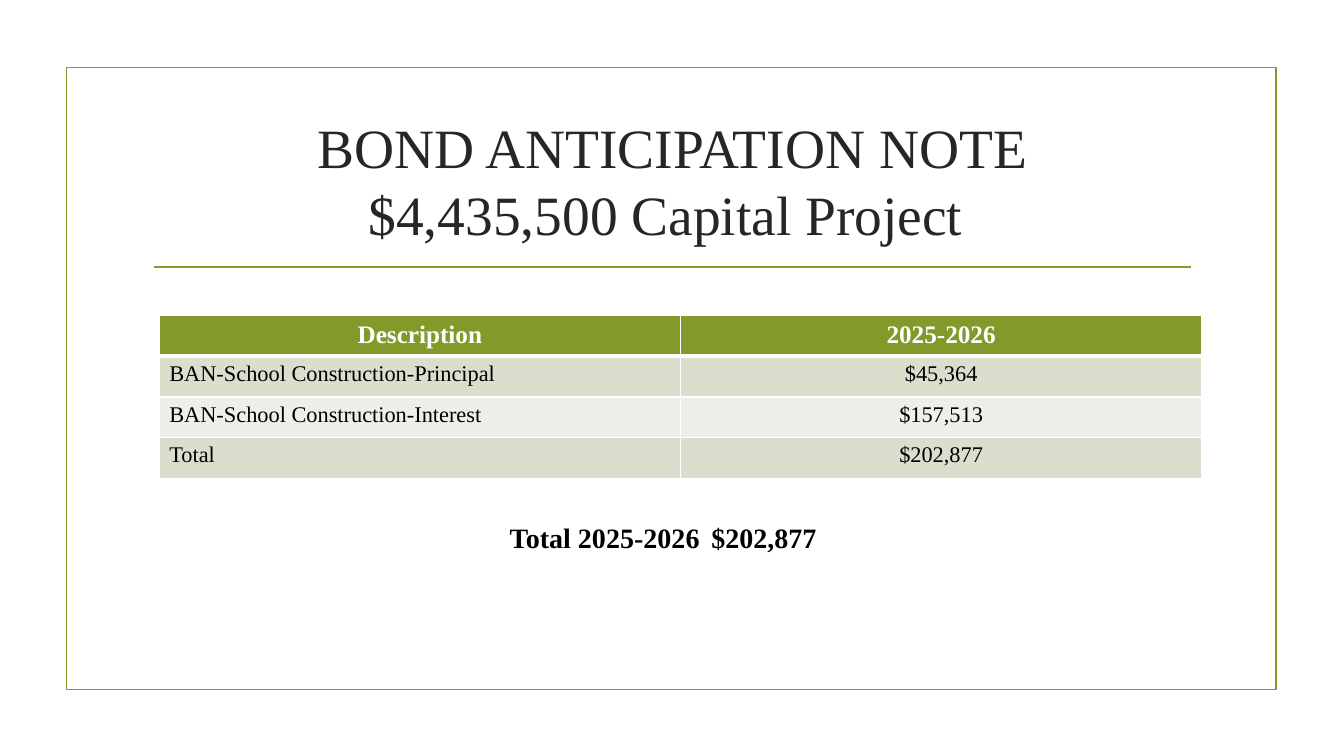
from dataclasses import dataclass
from typing import NamedTuple

from lxml.etree import SubElement
from pptx import Presentation
from pptx.dml.color import RGBColor
from pptx.enum.shapes import MSO_CONNECTOR, MSO_SHAPE
from pptx.enum.text import MSO_ANCHOR, MSO_AUTO_SIZE, PP_ALIGN
from pptx.oxml.ns import qn
from pptx.util import Emu, Pt

EMU_PER_PX = 9144  # 100 px to the inch


@dataclass(frozen=True)
class Theme:
    font: str = "Times New Roman"
    green: str = "83992A"
    title_ink: str = "262626"
    ink: str = "000000"
    white: str = "FFFFFF"
    bands: tuple[str, str] = ("D9DECD", "EDEFE8")
    title_size: float = 39.6
    header_size: float = 18
    cell_size: float = 16
    total_size: float = 20
    rule_width: float = 1.25
    grid_width: float = 1
    header_rule_width: float = 3


class Box(NamedTuple):
    x: int
    y: int
    w: int
    h: int

    def emu(self) -> tuple[Emu, ...]:
        return tuple(px(v) for v in self)


class BudgetRow(NamedTuple):
    description: str
    amount: str


THEME = Theme()
FRAME = Box(66, 67, 1200, 617)
TITLE = Box(142, 107, 1050, 143)
RULE = Box(153, 265, 1028, 0)
TABLE = Box(158, 313, 1034, 162)
TOTAL = Box(170, 511, 1021, 44)
ROWS = [
    BudgetRow("Description", "2025-2026"),
    BudgetRow("BAN-School Construction-Principal", "$45,364"),
    BudgetRow("BAN-School Construction-Interest", "$157,513"),
    BudgetRow("Total", "$202,877"),
]


def px(value: int) -> Emu:
    return Emu(value * EMU_PER_PX)


def rgb(color: str) -> RGBColor:
    return RGBColor.from_string(color)


def write(tf, text: str, *, size: float, color: str = THEME.ink,
          bold: bool = False, align=PP_ALIGN.CENTER) -> None:
    p = tf.paragraphs[0]
    p.text = text
    p.alignment = align
    for r in p.runs:
        r.font.name = THEME.font
        r.font.size = Pt(size)
        r.font.bold = bold
        r.font.color.rgb = rgb(color)


def style_line(line) -> None:
    line.color.rgb = rgb(THEME.green)
    line.width = Pt(THEME.rule_width)


def add_frame(s) -> None:
    sp = s.shapes.add_shape(MSO_SHAPE.RECTANGLE, *FRAME.emu())
    sp.shadow.inherit = False
    sp.fill.background()
    style_line(sp.line)


def add_rule(s) -> None:
    x, y, w, h = RULE.emu()
    rule = s.shapes.add_connector(MSO_CONNECTOR.STRAIGHT, x, y, x + w, y + h)
    style_line(rule.line)
    SubElement(rule._element.spPr, qn("a:effectLst"))


def add_title(s) -> None:
    sp = s.shapes.title
    sp.left, sp.top, sp.width, sp.height = TITLE.emu()
    tf = sp.text_frame
    tf.auto_size = MSO_AUTO_SIZE.NONE
    tf.vertical_anchor = MSO_ANCHOR.MIDDLE
    write(tf, "BOND ANTICIPATION NOTE\v$4,435,500 Capital Project ",
          size=THEME.title_size, color=THEME.title_ink)


def set_borders(cell, top: float, bottom: float) -> None:
    tc_pr = cell._tc.get_or_add_tcPr()
    widths = {"lnL": THEME.grid_width, "lnR": THEME.grid_width,
              "lnT": top, "lnB": bottom}
    for side, width in widths.items():
        ln = SubElement(tc_pr, qn(f"a:{side}"), w=str(Pt(width)))
        fill = SubElement(ln, qn("a:solidFill"))
        SubElement(fill, qn("a:srgbClr"), val=THEME.white)


def add_budget_table(s) -> None:
    columns = len(BudgetRow._fields)
    table = s.shapes.add_table(len(ROWS), columns, *TABLE.emu()).table
    table.horz_banding = False
    for i, row in enumerate(ROWS):
        header = i == 0
        top = THEME.header_rule_width if i == 1 else THEME.grid_width
        bottom = THEME.header_rule_width if header else THEME.grid_width
        for j, text in enumerate(row):
            cell = table.cell(i, j)
            set_borders(cell, top, bottom)
            cell.fill.solid()
            cell.fill.fore_color.rgb = rgb(
                THEME.green if header else THEME.bands[(i - 1) % 2])
            write(cell.text_frame, text, bold=header,
                  size=THEME.header_size if header else THEME.cell_size,
                  color=THEME.white if header else THEME.ink,
                  align=PP_ALIGN.CENTER if header or j else PP_ALIGN.LEFT)


def add_total(s) -> None:
    tf = s.shapes.add_textbox(*TOTAL.emu()).text_frame
    tf.word_wrap = True
    tf.auto_size = MSO_AUTO_SIZE.SHAPE_TO_FIT_TEXT
    write(tf, "Total 2025-2026\t$202,877\t", size=THEME.total_size, bold=True)


def main() -> None:
    prs = Presentation()
    prs.slide_width, prs.slide_height = px(1333), px(750)
    s = prs.slides.add_slide(prs.slide_layouts.get_by_name("Title Only"))
    s.background.fill.solid()
    s.background.fill.fore_color.rgb = rgb(THEME.white)
    add_frame(s)
    add_rule(s)
    add_title(s)
    add_budget_table(s)
    add_total(s)
    prs.save("out.pptx")


if __name__ == "__main__":
    main()
